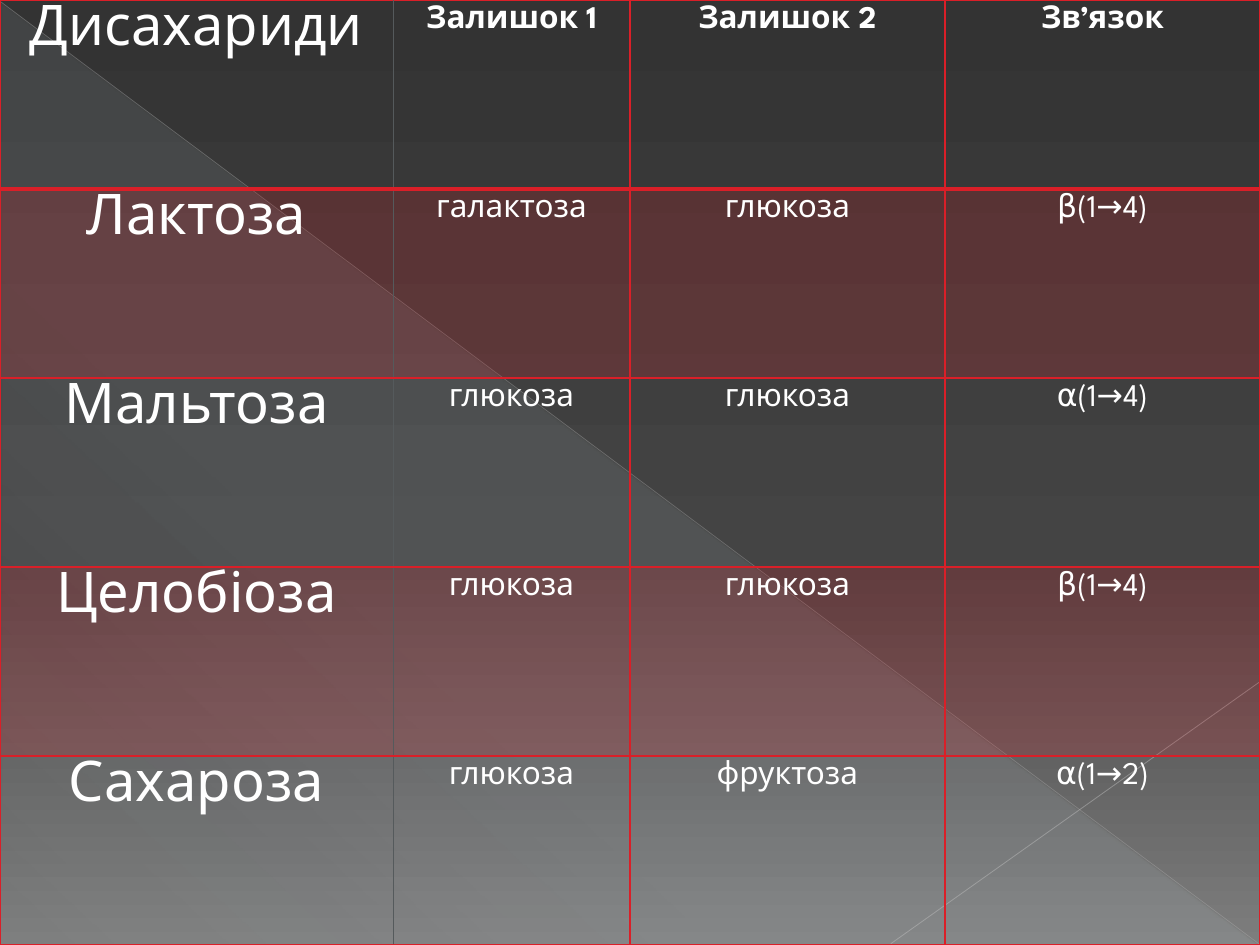
"""Build a slide with a table of disaccharides and their residues and bonds."""
import pptx
import pptx.util
import pptx.dml.color
import pptx.enum.shapes
import pptx.enum.text
import pptx.oxml
import pptx.oxml.ns

Inches, Pt = pptx.util.Inches, pptx.util.Pt
qn = pptx.oxml.ns.qn
NS = pptx.oxml.ns.nsdecls("a")

ROWS = [
    ("Дисахариди", "Залишок 1", "Залишок 2", "Зв’язок"),
    ("Лактоза", "галактоза", "глюкоза", "β(1→4)"),
    ("Мальтоза", "глюкоза", "глюкоза", "α(1→4)"),
    ("Целобіоза", "глюкоза", "глюкоза", "β(1→4)"),
    ("Сахароза", "глюкоза", "фруктоза", "α(1→2)"),
]
WIDTHS = (3.12, 1.88, 2.5, 2.5)
WIDE, HIGH = 10, 7.5

THEME = {
    "font": "League Spartan", "text": "FFFFFF", "red": "DA1F28", "seam": "555A5C",
    "big": 32, "small": 18, "tint": 20,
    "back": [(0, "333333", 100), (60, "444444", 100), (100, "7D7D7D", 100)],
    "sheen": [(0, "DEF5FA", 10), (70, "DEF5FA", 8), (100, "DEF5FA", 1)],
}
RAYS = [
    ((0, 0.01), (9.99, 7.49), "B9B9B9", 0.39, 35),
    ((10, 5.41), (7.07, 7.49), "C1C1C1", 0.47, 45),
]


def rgb(code):
    return pptx.dml.color.RGBColor.from_string(code)


def fade(node, share):
    alpha = pptx.oxml.parse_xml(f'<a:alpha {NS} val="{share * 1000}"/>')
    next(node.iter(qn("a:srgbClr"))).append(alpha)


def shade(fill, root, stops, angle):
    fill.gradient()
    node = next(root.iter(qn("a:gradFill")))
    marks = node.find(qn("a:gsLst"))
    marks.clear()
    for place, code, share in stops:
        marks.append(pptx.oxml.parse_xml(
            f'<a:gs {NS} pos="{place * 1000}"><a:srgbClr val="{code}">'
            f'<a:alpha val="{share * 1000}"/></a:srgbClr></a:gs>'))
    node.find(qn("a:lin")).set("ang", str(angle * 60000))


def edge(cell, side, code, width):
    cell._tc.get_or_add_tcPr().append(pptx.oxml.parse_xml(
        f'<a:ln{side} {NS} w="{Pt(width)}"><a:solidFill><a:srgbClr val="{code}"/>'
        f'</a:solidFill><a:prstDash val="solid"/></a:ln{side}>'))


def draw_back(slide):
    shade(slide.background.fill, slide.element, THEME["back"], 90)
    sheen = slide.shapes.add_shape(
        pptx.enum.shapes.MSO_SHAPE.RIGHT_TRIANGLE,
        Inches(0.01), Inches(0.02), Inches(9.98), Inches(7.48))
    sheen.shadow.inherit = False
    sheen.line.fill.background()
    shade(sheen.fill, sheen.element, THEME["sheen"], 133)
    for start, end, code, width, share in RAYS:
        ray = slide.shapes.add_connector(
            pptx.enum.shapes.MSO_CONNECTOR.STRAIGHT,
            *(Inches(n) for n in start + end))
        ray.line.color.rgb = rgb(code)
        ray.line.width = Pt(width)
        fade(ray.line._ln, share)
        ray.element.spPr.append(pptx.oxml.parse_xml(f"<a:effectLst {NS}/>"))


def style_cell(cell, text, row, col):
    for side in "LRTB":
        seam = (side, col) in (("R", 0), ("L", 1))
        thick = (side, row) in (("B", 0), ("T", 1))
        edge(cell, side, THEME["seam" if seam else "red"],
             0.5 if seam else 2 if thick else 1)
    if row % 2:
        cell.fill.solid()
        cell.fill.fore_color.rgb = rgb(THEME["red"])
        fade(cell._tc.tcPr.find(qn("a:solidFill")), THEME["tint"])
    else:
        cell.fill.background()
    cell.text_frame.text = text
    line = cell.text_frame.paragraphs[0]
    line.alignment = pptx.enum.text.PP_ALIGN.CENTER
    font = line.runs[0].font
    font.name = THEME["font"]
    font.size = Pt(THEME["small" if col else "big"])
    font.bold = row == 0 and col > 0
    font.color.rgb = rgb(THEME["text"])


def draw_table(slide):
    table = slide.shapes.add_table(
        len(ROWS), len(WIDTHS), 0, 0, Inches(WIDE), Inches(HIGH)).table
    table.first_row = table.horz_banding = False
    for column, width in zip(table.columns, WIDTHS):
        column.width = Inches(width)
    for row, texts in enumerate(ROWS):
        table.rows[row].height = Inches(HIGH / len(ROWS))
        for col, text in enumerate(texts):
            style_cell(table.cell(row, col), text, row, col)


def main():
    deck = pptx.Presentation()
    deck.slide_width, deck.slide_height = Inches(WIDE), Inches(HIGH)
    slide = deck.slides.add_slide(deck.slide_layouts[6])
    draw_back(slide)
    draw_table(slide)
    deck.save("out.pptx")


if __name__ == "__main__":
    main()
